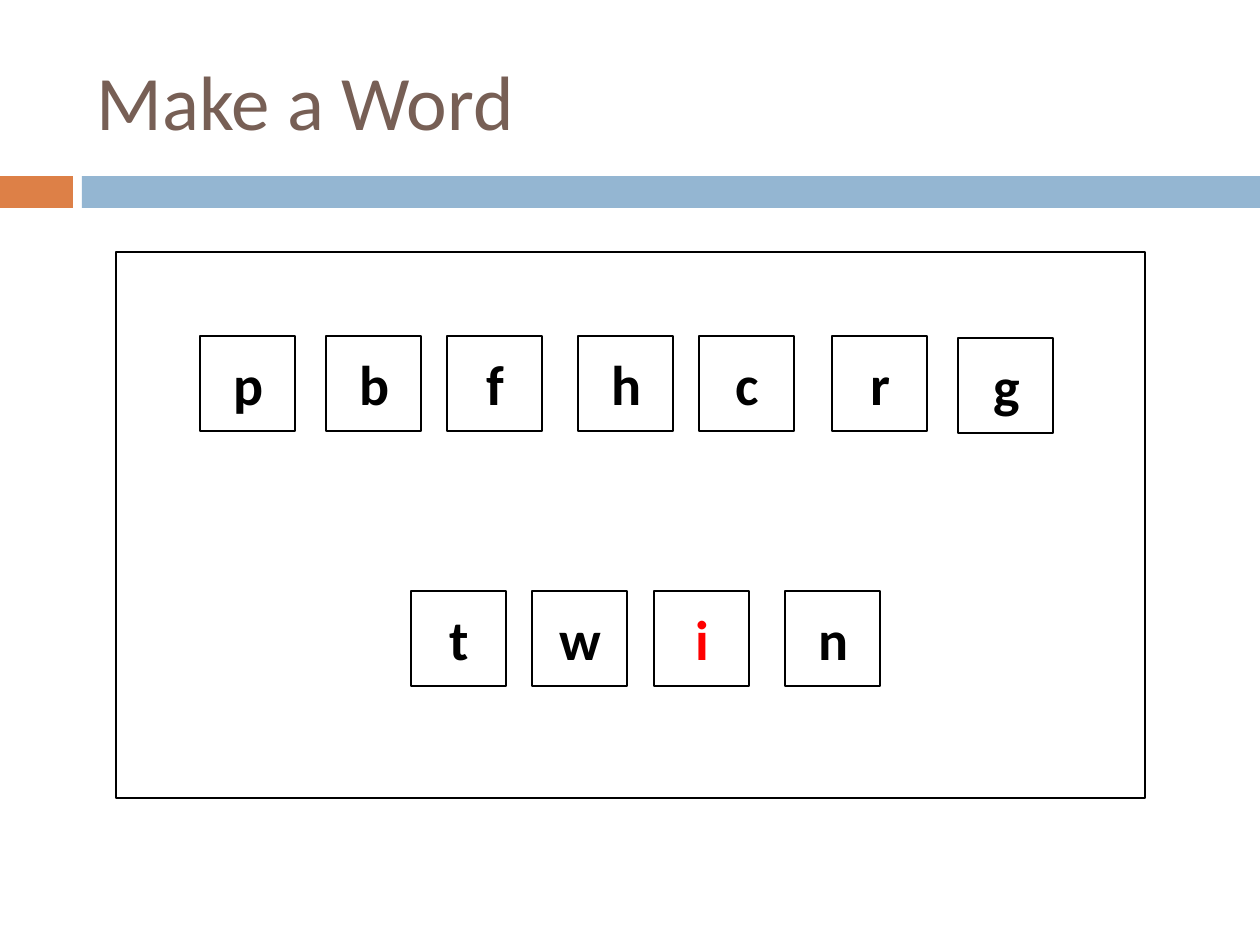
import pptx
import pptx.util
import pptx.dml.color
import pptx.enum.shapes
import pptx.enum.text

PX = 914400 / 126
COLORS = {"orange": "DD8047", "blue": "94B6D2", "brown": "775F55",
          "black": "000000", "red": "FF0000"}
TILE = 95
VOWELS = "aeiou"
# letter, left, top
TILES = [("p", 200, 336), ("b", 326, 336), ("f", 447, 336), ("h", 578, 336),
         ("c", 699, 336), ("r", 832, 336), ("g", 958, 338),
         ("t", 411, 591), ("w", 532, 591), ("i", 654, 591), ("n", 785, 591)]

prs = pptx.Presentation()
prs.slide_width, prs.slide_height = round(1260 * PX), round(945 * PX)
s = prs.slides.add_slide(prs.slide_layouts[6])


def add_rect(box, fill=None, line=None):
    sp = s.shapes.add_shape(pptx.enum.shapes.MSO_SHAPE.RECTANGLE,
                            *[round(v * PX) for v in box])
    sp.shadow.inherit = False
    for part, color in ((sp.fill, fill), (sp.line.fill, line)):
        if color:
            part.solid()
            part.fore_color.rgb = pptx.dml.color.RGBColor.from_string(COLORS[color])
        else:
            part.background()
    if line:
        sp.line.width = pptx.util.Pt(1.5)


def add_text(box, text, color, align, anchor, **font):
    tf = s.shapes.add_textbox(*[round(v * PX) for v in box]).text_frame
    tf.word_wrap = True
    tf.vertical_anchor = anchor
    p = tf.paragraphs[0]
    p.alignment = align
    r = p.add_run()
    r.text = text
    r.font.color.rgb = pptx.dml.color.RGBColor.from_string(COLORS[color])
    for name, value in font.items():
        setattr(r.font, name, value)


ALIGN = pptx.enum.text.PP_ALIGN
ANCHOR = pptx.enum.text.MSO_ANCHOR
TITLE_FONT = {"name": "Calibri", "size": pptx.util.Pt(44)}
LETTER_FONT = {"name": "Calibri", "size": pptx.util.Pt(32), "bold": True}

add_rect((0, 176, 73, 32), fill="orange")
add_rect((82, 176, 1178, 32), fill="blue")
add_text((84, 32, 1124, 136), "Make a Word", "brown", ALIGN.LEFT, ANCHOR.MIDDLE,
         **TITLE_FONT)

add_rect((116, 252, 1029, 546), line="black")
for letter, x, y in TILES:
    add_rect((x, y, TILE, TILE), line="black")
    add_text((x + 4, y + 7, 89, 81), letter, "red" if letter in VOWELS else "black",
             ALIGN.CENTER, ANCHOR.TOP, **LETTER_FONT)

prs.save("out.pptx")
